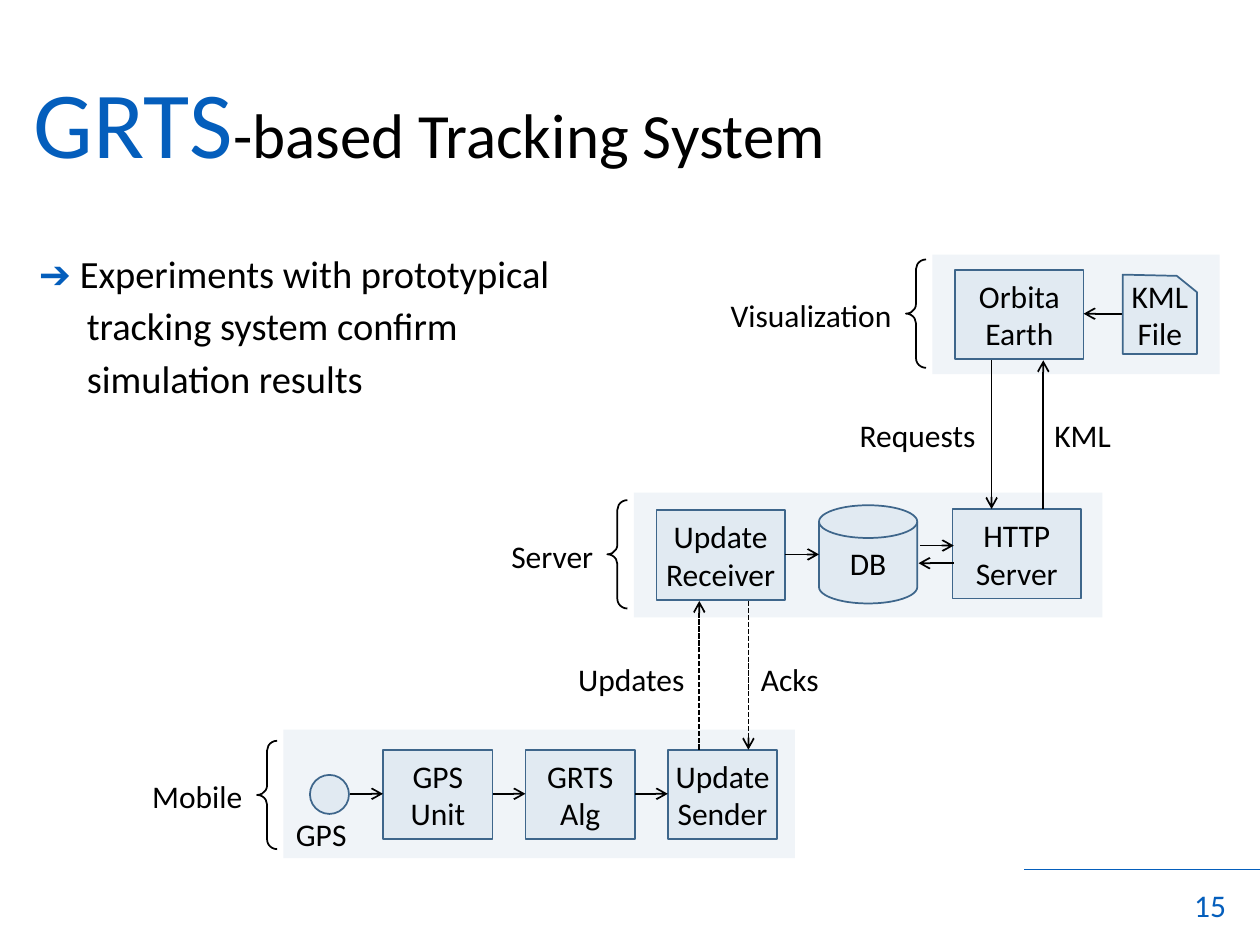
from lxml.etree import SubElement
from pptx import Presentation
from pptx.dml.color import RGBColor
from pptx.enum.dml import MSO_LINE
from pptx.enum.shapes import MSO_CONNECTOR, MSO_SHAPE
from pptx.enum.text import MSO_ANCHOR, PP_ALIGN
from pptx.oxml.ns import qn
from pptx.util import Inches, Pt

FONT = "Calibri"
BLUE, BLACK = "045EBC", "000000"
PANEL, NODE, EDGE = "F0F4F8", "E1EAF2", "3E668B"
BOX_H = 0.71
BRACE_W, BRACE_H, BRACE_GAP = 0.16, 0.86, 0.05
LABEL_H = 0.4

RECT, DISK, CIRCLE = MSO_SHAPE.RECTANGLE, MSO_SHAPE.FLOWCHART_MAGNETIC_DISK, MSO_SHAPE.OVAL

# Boxes are left, top, width, height; arrows are x1, y1, x2, y2.
TIERS = [
    {
        "label": "Server", "label_width": 0.86, "label_top": 4.21, "brace_top": 3.97,
        "panel": (5.03, 3.91, 3.72, 0.99),
        "nodes": [
            (RECT, "Update\nReceiver", (5.21, 4.05, 1.02, BOX_H)),
            (RECT, "HTTP\nServer", (7.56, 4.04, 1.02, BOX_H)),
            (DISK, "DB", (6.5, 4.01, 0.78, 0.78)),
        ],
        "arrows": [(6.23, 4.4, 6.5, 4.4), (7.3, 4.33, 7.57, 4.33), (7.57, 4.47, 7.29, 4.47)],
    },
    {
        "label": "Visualization", "label_width": 1.49, "label_top": 2.3, "brace_top": 2.06,
        "panel": (7.4, 2.02, 2.28, 0.95),
        "nodes": [(RECT, "Orbita\nEarth", (7.58, 2.14, 1.02, BOX_H))],
        "arrows": [(8.91, 2.49, 8.6, 2.49)],
    },
    {
        "label": "Mobile", "label_width": 0.93, "label_top": 6.12, "brace_top": 5.88,
        "panel": (2.25, 5.79, 4.06, 1.02),
        "nodes": [(CIRCLE, "", (2.46, 6.15, 0.31, 0.31))] + [
            (RECT, text, (3.04 + 1.13 * i, 5.95, 0.87, BOX_H))
            for i, text in enumerate(["GPS\nUnit", "GRTS\nAlg", "Update\nSender"])
        ],
        "arrows": [(2.78 + 1.13 * i, 6.3, 3.04 + 1.13 * i, 6.3) for i in range(3)],
        "caption": ("GPS", (2.25, 6.42, 0.61, LABEL_H)),
    },
]
KML_FILE = ("KML\nFile", [(8.91, 2.81), (9.5, 2.81), (9.5, 2.32), (9.34, 2.19), (8.91, 2.18)])
DASHED_LINKS = [(5.55, 5.95, 5.55, 4.77), (5.94, 4.77, 5.94, 5.95)]
SOLID_LINKS = [(7.87, 2.86, 7.87, 4.04), (8.28, 4.04, 8.28, 2.86)]
LINK_LABELS = [
    ("Requests", (6.65, 3.25, 1.19, LABEL_H), PP_ALIGN.RIGHT),
    ("KML", (8.27, 3.25, 0.66, LABEL_H), PP_ALIGN.LEFT),
    ("Updates", (4.49, 5.19, 1.05, LABEL_H), PP_ALIGN.LEFT),
    ("Acks", (5.94, 5.19, 0.66, LABEL_H), PP_ALIGN.LEFT),
]
TITLE = [("GRTS", 54, BLUE), ("-based Tracking System", 36, BLACK)]
BODY_MARK = "➔ "
BODY_LINES = ["Experiments with prototypical", "tracking system confirm", "simulation results"]
PAGE_NUMBER = "15"


def rgb(color):
    return RGBColor.from_string(color)


def inches(lengths):
    return [Inches(length) for length in lengths]


def style_font(font, size, color):
    font.name, font.size = FONT, Pt(size)
    font.color.rgb = rgb(color)


def set_insets(frame, side, vertical):
    frame.margin_left = frame.margin_right = Inches(side)
    frame.margin_top = frame.margin_bottom = Inches(vertical)


def add_text(shapes, text, place, align=PP_ALIGN.LEFT, color=BLACK):
    frame = shapes.add_textbox(*inches(place)).text_frame
    paragraph = frame.paragraphs[0]
    paragraph.text, paragraph.alignment = text, align
    style_font(paragraph.font, 18, color)
    return frame


def finish_node(node, text):
    """Give a diagram node its fill, outline and centred text."""
    node.shadow.inherit = False
    node.fill.solid()
    node.fill.fore_color.rgb = rgb(NODE)
    node.line.color.rgb, node.line.width = rgb(EDGE), Pt(1)
    if text:
        frame = node.text_frame
        frame.word_wrap, frame.vertical_anchor = False, MSO_ANCHOR.MIDDLE
        set_insets(frame, 0, 0.05)
        paragraph = frame.paragraphs[0]
        paragraph.text, paragraph.alignment = text, PP_ALIGN.CENTER
        style_font(paragraph.font, 18, BLACK)


def add_line(shapes, ends, color=BLACK):
    line = shapes.add_connector(MSO_CONNECTOR.STRAIGHT, *inches(ends))
    line.line.color.rgb, line.line.width = rgb(color), Pt(1)
    SubElement(line._element.spPr, qn("a:effectLst"))
    return line


def add_arrow(shapes, ends, dashed=False):
    arrow = add_line(shapes, ends)
    if dashed:
        arrow.line.dash_style = MSO_LINE.SQUARE_DOT
    SubElement(arrow.line._get_or_add_ln(), qn("a:tailEnd"), type="arrow")


def add_tier(shapes, tier):
    """Draw one tier: panel, nodes, arrows, and the brace with its label."""
    panel = shapes.add_shape(RECT, *inches(tier["panel"]))
    panel.shadow.inherit = False
    panel.fill.solid()
    panel.fill.fore_color.rgb = rgb(PANEL)
    panel.line.fill.background()

    for kind, text, place in tier["nodes"]:
        finish_node(shapes.add_shape(kind, *inches(place)), text)
    for ends in tier["arrows"]:
        add_arrow(shapes, ends)
    if "caption" in tier:
        add_text(shapes, *tier["caption"]).word_wrap = False

    brace_left = tier["panel"][0] - BRACE_GAP - BRACE_W
    brace = shapes.add_shape(
        MSO_SHAPE.LEFT_BRACE, *inches((brace_left, tier["brace_top"], BRACE_W, BRACE_H)))
    brace.shadow.inherit = False
    brace.adjustments[0], brace.adjustments[1] = 0.48, 0.5
    brace.fill.background()
    brace.line.color.rgb, brace.line.width = rgb(BLACK), Pt(1)

    width = tier["label_width"]
    label_place = (brace_left - width, tier["label_top"], width, LABEL_H)
    add_text(shapes, tier["label"], label_place).word_wrap = False


def add_kml_file(shapes):
    text, (start, *corners) = KML_FILE
    outline = shapes.build_freeform(*inches(start))
    outline.add_line_segments([inches(corner) for corner in corners], close=True)
    finish_node(outline.convert_to_shape(), text)


def add_title(shapes):
    frame = shapes.add_textbox(*inches((0.27, 0.47, 8.63, 1.12))).text_frame
    frame.word_wrap, frame.vertical_anchor = True, MSO_ANCHOR.MIDDLE
    set_insets(frame, 0, 0)
    paragraph = frame.paragraphs[0]
    paragraph.line_spacing = 0.85
    for text, size, color in TITLE:
        run = paragraph.add_run()
        run.text = text
        style_font(run.font, size, color)


def add_body(shapes):
    frame = shapes.add_textbox(*inches((0.31, 1.93, 4.3, 1.43))).text_frame
    frame.word_wrap = False
    set_insets(frame, 0, 0)
    paragraph = frame.paragraphs[0]
    paragraph.line_spacing, paragraph.space_before = 1.14, Pt(4.4)
    hanging = Inches(0.38)
    properties = paragraph._p.get_or_add_pPr()
    properties.set("marL", str(hanging))
    properties.set("indent", str(-hanging))
    mark = paragraph.add_run()
    mark.text = BODY_MARK
    style_font(mark.font, 22, BLUE)
    for i, text in enumerate(BODY_LINES):
        if i:
            paragraph.add_line_break()
        run = paragraph.add_run()
        run.text = text
        style_font(run.font, 22, BLACK)


def main():
    deck = Presentation()
    deck.slide_width, deck.slide_height = Inches(10), Inches(7.5)
    shapes = deck.slides.add_slide(deck.slide_layouts[6]).shapes

    add_line(shapes, (10, 6.9, 8.13, 6.9), BLUE)
    number = add_text(shapes, PAGE_NUMBER, (8.91, 6.88, 0.82, 0.5), PP_ALIGN.RIGHT, BLUE)
    number.word_wrap, number.vertical_anchor = True, MSO_ANCHOR.BOTTOM
    set_insets(number, 0, 0.05)

    for tier in TIERS:
        group = shapes.add_group_shape().shapes
        add_tier(group, tier)
        if tier["label"] == "Visualization":
            add_kml_file(group)

    add_title(shapes)
    add_body(shapes)
    for ends in DASHED_LINKS:
        add_arrow(shapes, ends, dashed=True)
    for ends in SOLID_LINKS:
        add_arrow(shapes, ends)
    for text, place, align in LINK_LABELS:
        add_text(shapes, text, place, align).word_wrap = True
    deck.save("out.pptx")


if __name__ == "__main__":
    main()
